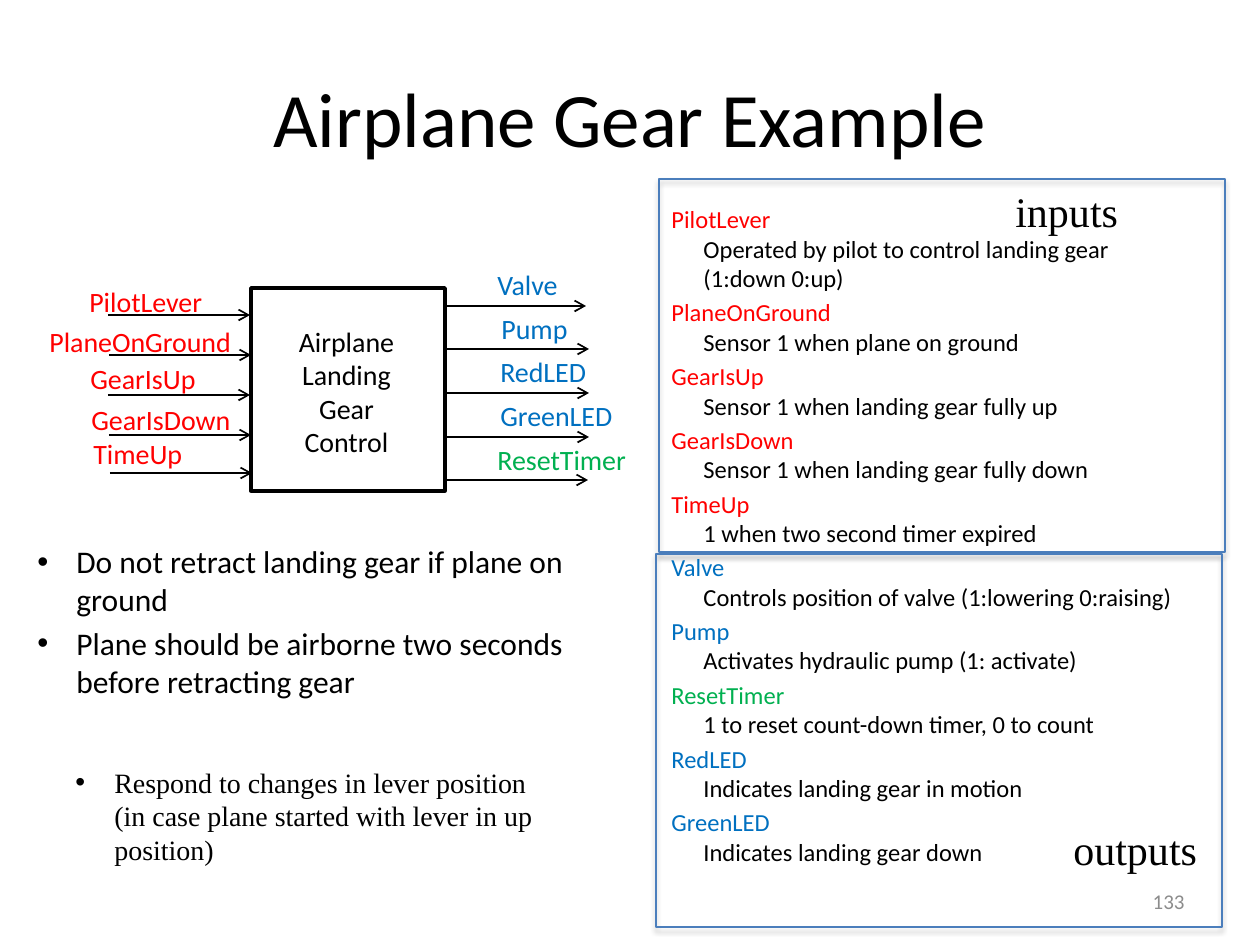
from lxml import etree
from pptx import Presentation
from pptx import util as u
from pptx.dml.color import RGBColor
from pptx.enum import shapes, text
from pptx.oxml import parse_xml
from pptx.oxml.ns import nsdecls, qn

SCALE = u.Inches(1) / 126  # EMU per px
COLORS = {"black": "000000", "red": "FF0000", "blue": "0070C0",
          "green": "00B050", "gray": "8C8C8C", "frame": "4B7EBC"}
ALIGN = text.PP_ALIGN


def px(*lengths):
    return [round(length * SCALE) for length in lengths]


def write(box, paragraphs, size, font="Calibri", wrap=True, align=ALIGN.LEFT,
          margin=0, indent=0, before=0.2, bullet=False,
          anchor=text.MSO_ANCHOR.TOP, fit=text.MSO_AUTO_SIZE.SHAPE_TO_FIT_TEXT):
    """Fill a box with paragraphs, each a list of (line, color) parted by line breaks."""
    frame = box.text_frame
    frame.word_wrap = wrap
    frame.auto_size = fit
    frame.vertical_anchor = anchor
    for index, lines in enumerate(paragraphs):
        para = frame.add_paragraph() if index else frame.paragraphs[0]
        para.alignment = align
        para.space_before = u.Pt(size * before)
        properties = para._p.get_or_add_pPr()
        properties.set("marL", str(px(margin)[0]))
        properties.set("indent", str(px(indent)[0]))
        if bullet:
            etree.SubElement(properties, qn("a:buFont"), typeface="Arial")
            etree.SubElement(properties, qn("a:buChar"), char="•")
        for number, (line, color) in enumerate(lines):
            if number:
                para.add_line_break()
            span = para.add_run()
            span.text = line
            span.font.name = font
            span.font.size = u.Pt(size)
            span.font.color.rgb = RGBColor.from_string(COLORS[color])


deck = Presentation()
deck.slide_width, deck.slide_height = px(1260, 945)
page = deck.slides.add_slide(deck.slide_layouts[5])

# Title
title = page.shapes.title
title.left, title.top, title.width, title.height = px(63, 38, 1134, 158)
write(title, [[("Airplane Gear Example", "black")]], 44, align=ALIGN.CENTER, before=0,
      anchor=text.MSO_ANCHOR.MIDDLE, fit=text.MSO_AUTO_SIZE.NONE)

# Page number
number_box = page.shapes.add_textbox(*px(903, 876, 294, 50))
write(number_box, [[("133", "gray")]], 12, align=ALIGN.RIGHT, before=0,
      anchor=text.MSO_ANCHOR.MIDDLE, fit=text.MSO_AUTO_SIZE.NONE)

# Controller block and the two framed panels: place, color, line width
for place, color, width in [((251, 288, 194, 203), "black", 2),
                            ((659, 179, 566, 373), "frame", 0.75),
                            ((656, 554, 566, 373), "frame", 0.75)]:
    block = page.shapes.add_shape(shapes.MSO_SHAPE.RECTANGLE, *px(*place))
    block.shadow.inherit = False
    block.fill.background()
    block.line.color.rgb = RGBColor.from_string(COLORS[color])
    block.line.width = u.Pt(width)
    if color == "frame":
        effects = block._element.spPr.find(qn("a:effectLst"))
        effects.append(parse_xml(
            f'<a:outerShdw {nsdecls("a")} blurRad="{u.Pt(3.1)}" dist="{u.Pt(1.8)}" '
            'dir="5400000" rotWithShape="0"><a:srgbClr val="000000">'
            '<a:alpha val="35000"/></a:srgbClr></a:outerShdw>'))

block_label = page.shapes.add_textbox(*px(228, 318, 189, 149))
write(block_label, [[("Airplane Landing Gear Control", "black")]], 16,
      align=ALIGN.CENTER, margin=48)

# Signals: name, color, label left, top and width, arrow start and y
signals = [
    ("PilotLever", "red", 77, 278, 140, 108, 315),
    ("PlaneOnGround", "red", 37, 318, 209, 109, 355),
    ("GearIsUp", "red", 78, 355, 132, 108, 395),
    ("GearIsDown", "red", 79, 396, 166, 109, 435),
    ("TimeUp", "red", 81, 430, 116, 110, 473),
    ("Valve", "blue", 485, 261, 88, 444, 306),
    ("Pump", "blue", 489, 305, 92, 447, 349),
    ("RedLED", "blue", 488, 348, 113, 447, 393),
    ("GreenLED", "blue", 488, 392, 140, 447, 437),
    ("ResetTimer", "green", 485, 436, 156, 446, 480),
]
for name, color, left, top, width, start, y in signals:
    arrow = page.shapes.add_connector(shapes.MSO_CONNECTOR.STRAIGHT,
                                      *px(start, y, start + 142, y))
    arrow.line.color.rgb = RGBColor.from_string(COLORS["black"])
    arrow.line.width = u.Pt(1)
    etree.SubElement(arrow.line._get_or_add_ln(), qn("a:tailEnd"), type="arrow")
    etree.SubElement(arrow._element.spPr, qn("a:effectLst"))
    label = page.shapes.add_textbox(*px(left, top, width, 47))
    write(label, [[(name, color)]], 16, wrap=False, margin=48, indent=-48)

# Signal descriptions
descriptions = [
    ("PilotLever", "red", "Operated by pilot to control landing gear", "(1:down 0:up)"),
    ("PlaneOnGround", "red", "Sensor 1 when plane on ground"),
    ("GearIsUp", "red", "Sensor 1 when landing gear fully up"),
    ("GearIsDown", "red", "Sensor 1 when landing gear fully down"),
    ("TimeUp", "red", "1 when two second timer expired"),
    ("Valve", "blue", "Controls position of valve (1:lowering 0:raising)"),
    ("Pump", "blue", "Activates hydraulic pump (1: activate)"),
    ("ResetTimer", "green", "1 to reset count-down timer, 0 to count"),
    ("RedLED", "blue", "Indicates landing gear in motion"),
    ("GreenLED", "blue", "Indicates landing gear down"),
]
description_box = page.shapes.add_textbox(*px(659, 198, 601, 689))
write(description_box,
      [[(name, color)] + [(line, "black") for line in lines]
       for name, color, *lines in descriptions],
      14, margin=32, indent=-32)

# Panel captions
for caption, left, top in [("inputs", 1003, 179), ("outputs", 1061, 817)]:
    caption_box = page.shapes.add_textbox(*px(left, top, 239, 63))
    write(caption_box, [[(caption, "black")]], 24, "Times New Roman", before=0)

# Requirements
rules_box = page.shapes.add_textbox(*px(25, 536, 634, 219))
write(rules_box, [[("Do not retract landing gear if plane on ground", "black")],
                  [("Plane should be airborne two seconds before retracting gear", "black")]],
      18, margin=39, indent=-39, bullet=True)
lever_box = page.shapes.add_textbox(*px(63, 759, 510, 115))
write(lever_box, [[("Respond to changes in lever position", "black"),
                   ("(in case plane started with lever in up position)", "black")]],
      16, "Times New Roman", margin=39, indent=-39, bullet=True)

deck.save("out.pptx")
